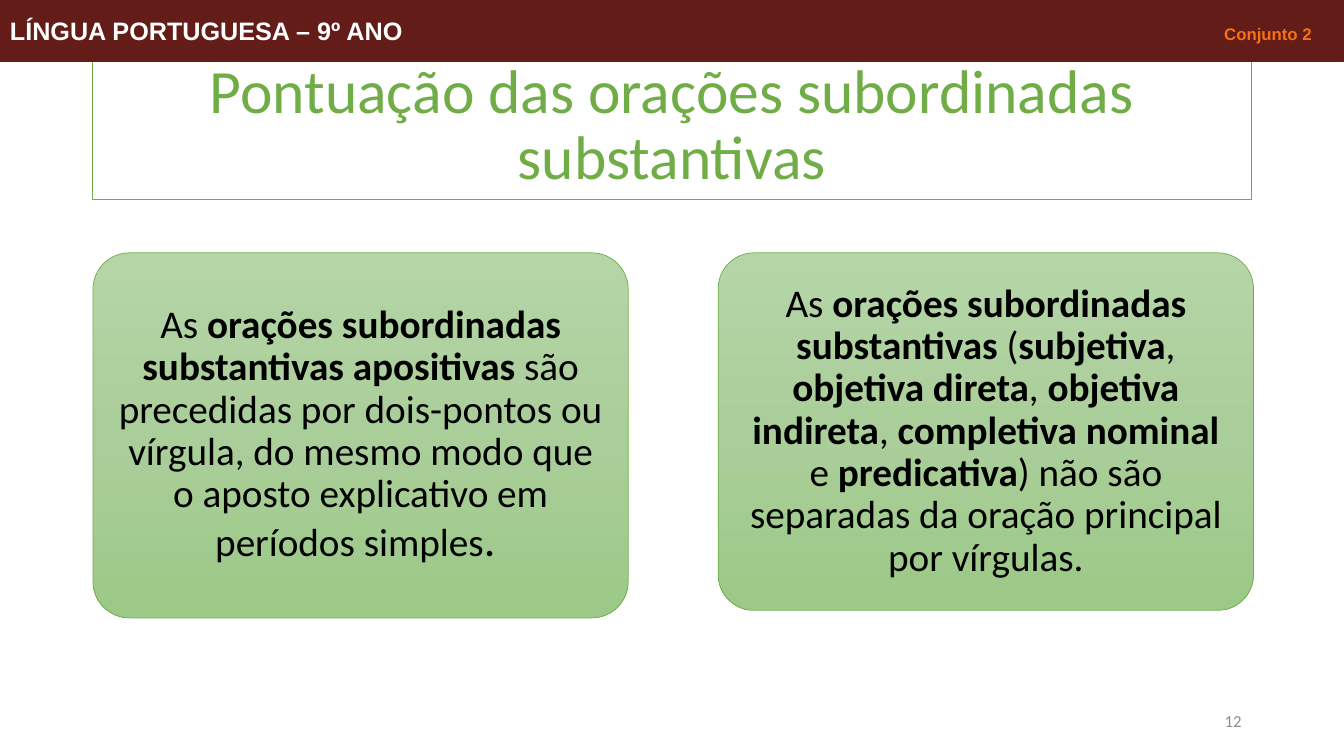
from copy import deepcopy

from lxml import etree
from pptx import Presentation
from pptx.dml.color import RGBColor
from pptx.enum.shapes import MSO_SHAPE
from pptx.enum.text import MSO_ANCHOR, PP_ALIGN
from pptx.oxml.ns import qn
from pptx.util import Pt

RECTANGLE, ROUNDED = MSO_SHAPE.RECTANGLE, MSO_SHAPE.ROUNDED_RECTANGLE
MIDDLE = MSO_ANCHOR.MIDDLE
LEFT, CENTER, RIGHT = PP_ALIGN.LEFT, PP_ALIGN.CENTER, PP_ALIGN.RIGHT

GREEN, MAROON, ORANGE = "70AD47", "631C18", "F47116"
WHITE, BLACK, GRAY = "FFFFFF", "000000", "8C8C8C"
CARD_STOPS = ((0, "B5D5A7"), (0.5, "AACE9A"), (1, "9CC987"))
CARD_TOP, CARD_WIDTH, CARD_INSET = 180.6, 382.4, 8.64
CARDS = (
    (66.4, 260.8,
     "As *orações subordinadas substantivas apositivas* são precedidas por "
     "dois-pontos ou vírgula, do mesmo modo que o aposto explicativo em períodos simples",
     ". "),
    (513, 255.4,
     "As *orações subordinadas substantivas* (*subjetiva*, *objetiva direta*, "
     "*objetiva indireta*, *completiva nominal* e *predicativa*) não são "
     "separadas da oração principal por vírgulas.",
     ""),
)


def color(value):
    """Turn a hex string into a colour."""
    return RGBColor.from_string(value)


def add_box(page, shape, bounds, line, width, fill=None):
    """Add an outlined preset shape without a shadow."""
    box = page.shapes.add_shape(shape, *map(Pt, bounds))
    box.shadow.inherit = False
    box.line.color.rgb = color(line)
    box.line.width = Pt(width)
    if fill:
        box.fill.solid()
        box.fill.fore_color.rgb = color(fill)
    return box


def format_text(box, align, size, ink, font="Calibri", bold=False):
    """Set up the first paragraph of a box and return it."""
    frame = box.text_frame
    frame.word_wrap = True
    frame.vertical_anchor = MIDDLE
    para = frame.paragraphs[0]
    para.alignment = align
    para.font.size = Pt(size)
    para.font.name = font
    para.font.bold = bold
    para.font.color.rgb = color(ink)
    return para


def add_span(para, text):
    """Append a run of text to a paragraph."""
    span = para.add_run()
    span.text = text
    return span


def add_title(page, text):
    """Add the outlined title."""
    box = add_box(page, RECTANGLE, (66, 38.25, 828, 104.4), GREEN, 1, WHITE)
    para = format_text(box, CENTER, 44, GREEN)
    para.line_spacing = 0.9
    add_span(para, text)


def fill_gradient(card):
    """Fill a card with the three-stop vertical gradient."""
    card.fill.gradient()
    card.fill.gradient_angle = 270
    stop_list = card._element.spPr.find(".//" + qn("a:gsLst"))
    stop_list.append(deepcopy(stop_list[-1]))
    for stop, (position, value) in zip(card.fill.gradient_stops, CARD_STOPS):
        stop.position = position
        stop.color.rgb = color(value)


def add_card(page, left, height, text, ending):
    """Add a rounded card whose starred passages are bold."""
    card = add_box(page, ROUNDED, (left, CARD_TOP, CARD_WIDTH, height), GREEN, 0.5)
    card.adjustments[0] = 0.1
    fill_gradient(card)
    frame = card.text_frame
    frame.margin_left = frame.margin_right = Pt(CARD_INSET)
    frame.margin_top = frame.margin_bottom = Pt(CARD_INSET)
    para = format_text(card, CENTER, 28, BLACK)
    para.line_spacing = 0.9
    for index, passage in enumerate(text.split("*")):
        span = add_span(para, passage)
        if index % 2:
            span.font.bold = True
    if ending:
        add_span(para, ending).font.size = Pt(33)


def add_page_number(page, number):
    """Add the page number at the bottom right."""
    box = page.shapes.add_textbox(Pt(678), Pt(500.4), Pt(216), Pt(28.8))
    add_span(format_text(box, RIGHT, 12, GRAY), number)


def add_header(page, subject, label):
    """Add the top band with a subject and a right-tabbed label."""
    band = add_box(page, RECTANGLE, (0, 0, 960, 44), MAROON, 0.75, MAROON)
    para = format_text(band, LEFT, 18, WHITE, "Arial", True)
    tabs = etree.Element(qn("a:tabLst"))
    etree.SubElement(tabs, qn("a:tab"), pos=str(Pt(930)), algn="r")
    para._p.get_or_add_pPr().find(qn("a:defRPr")).addprevious(tabs)
    add_span(para, subject + "\t")
    span = add_span(para, label)
    span.font.size = Pt(12)
    span.font.color.rgb = color(ORANGE)


def main():
    """Build the slide and save the deck."""
    deck = Presentation()
    deck.slide_width, deck.slide_height = Pt(960), Pt(540)
    page = deck.slides.add_slide(deck.slide_layouts[6])
    add_title(page, "Pontuação das orações subordinadas substantivas")
    for card in CARDS:
        add_card(page, *card)
    add_page_number(page, "12")
    add_header(page, "LÍNGUA PORTUGUESA – 9º ANO", "Conjunto 2")
    deck.save("out.pptx")


if __name__ == "__main__":
    main()
